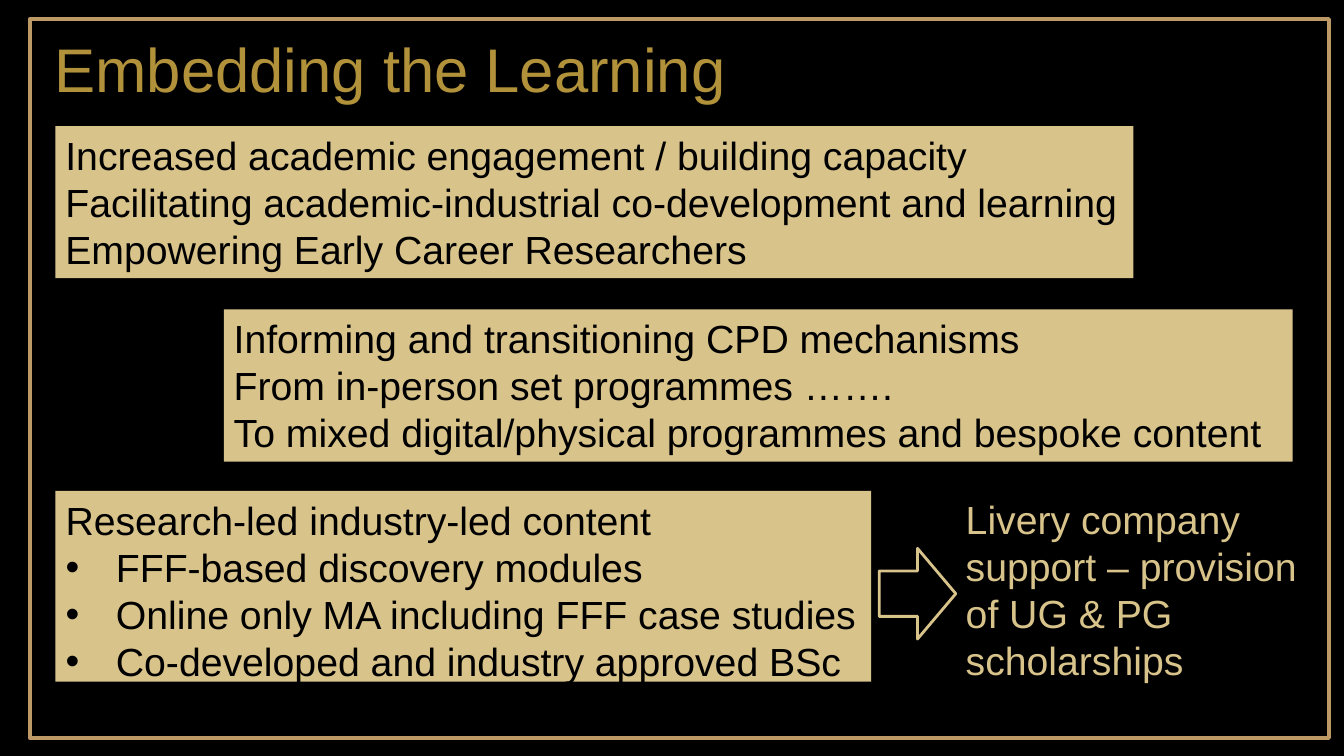
from lxml import etree
from pptx import Presentation
from pptx import util as u
from pptx.dml.color import RGBColor
from pptx.enum import shapes, text
from pptx.oxml import ns

COLOURS = {"black": "000000", "sand": "D8C38B", "gold": "B2913B", "frame": "BD9965"}
FONT = "Arial"


def colour(name):
    return RGBColor.from_string(COLOURS[name])


def write(shape, lines, size, colour_name, wrap=True):
    """Fill a shape with left-aligned lines; those starting with • become bullets."""
    frame = shape.text_frame
    frame.word_wrap = wrap
    frame.auto_size = text.MSO_AUTO_SIZE.SHAPE_TO_FIT_TEXT
    frame.vertical_anchor = text.MSO_ANCHOR.TOP
    for index, line in enumerate(lines):
        paragraph = frame.paragraphs[0] if index == 0 else frame.add_paragraph()
        paragraph.alignment = text.PP_ALIGN.LEFT
        paragraph.space_before = u.Pt(0)
        properties = paragraph._p.get_or_add_pPr()
        bulleted = line.startswith("•")
        indent = u.Inches(0.5) if bulleted else 0
        properties.set("marL", str(indent))
        properties.set("indent", str(-indent))
        if bulleted:
            etree.SubElement(properties, ns.qn("a:buFont"), typeface=FONT)
            etree.SubElement(properties, ns.qn("a:buChar"), char="•")
        else:
            etree.SubElement(properties, ns.qn("a:buNone"))
        run = paragraph.add_run()
        run.text = line.lstrip("•")
        run.font.name = FONT
        run.font.size = u.Pt(size)
        run.font.color.rgb = colour(colour_name)


presentation = Presentation()
presentation.slide_width = u.Inches(13.33)
presentation.slide_height = u.Inches(7.5)
slide = presentation.slides.add_slide(presentation.slide_layouts[1])
slide.background.fill.solid()
slide.background.fill.fore_color.rgb = colour("black")

# Border around the whole slide
border = slide.shapes.add_shape(
    shapes.MSO_SHAPE.RECTANGLE,
    u.Inches(0.3), u.Inches(0.19), u.Inches(12.88), u.Inches(7.13))
border.shadow.inherit = False
border.fill.background()
border.line.color.rgb = colour("frame")
border.line.width = u.Pt(3)

# Title
title = slide.shapes.title
title.left, title.top = u.Inches(0.44), u.Inches(0.26)
title.width, title.height = u.Inches(6.93), u.Inches(0.84)
write(title, ["Embedding the Learning"], 44, "gold", wrap=False)

# Sand-coloured panels; the bulleted one is the body placeholder
engagement = slide.shapes.add_textbox(0, 0, 0, 0)
mechanisms = slide.shapes.add_textbox(0, 0, 0, 0)
content = slide.placeholders[1]
panels = [
    (engagement, 0.55, 1.25, 10.69, 1.51, [
        "Increased academic engagement / building capacity",
        "Facilitating academic-industrial co-development and learning",
        "Empowering Early Career Researchers"]),
    (mechanisms, 2.22, 3.07, 10.6, 1.51, [
        "Informing and transitioning CPD mechanisms",
        "From in-person set programmes …….",
        "To mixed digital/physical programmes and bespoke content"]),
    (content, 0.55, 4.87, 8.09, 1.99, [
        "Research-led industry-led content",
        "•FFF-based discovery modules",
        "•Online only MA including FFF case studies",
        "•Co-developed and industry approved BSc"]),
]
for panel, left, top, width, height, lines in panels:
    panel.left, panel.top = u.Inches(left), u.Inches(top)
    panel.width, panel.height = u.Inches(width), u.Inches(height)
    panel.fill.solid()
    panel.fill.fore_color.rgb = colour("sand")
    write(panel, lines, 28, "black")

# Outcome on the right, with the arrow leading to it
outcome = slide.shapes.add_textbox(
    u.Inches(9.48), u.Inches(4.86), u.Inches(3.52), u.Inches(1.99))
write(outcome, ["Livery company support – provision of UG & PG scholarships"], 28, "sand")

arrow = slide.shapes.add_shape(
    shapes.MSO_SHAPE.RIGHT_ARROW,
    u.Inches(8.72), u.Inches(5.44), u.Inches(0.76), u.Inches(0.9))
arrow.shadow.inherit = False
arrow.fill.solid()
arrow.fill.fore_color.rgb = colour("black")
arrow.line.color.rgb = colour("sand")
arrow.line.width = u.Pt(2)

presentation.save("out.pptx")
